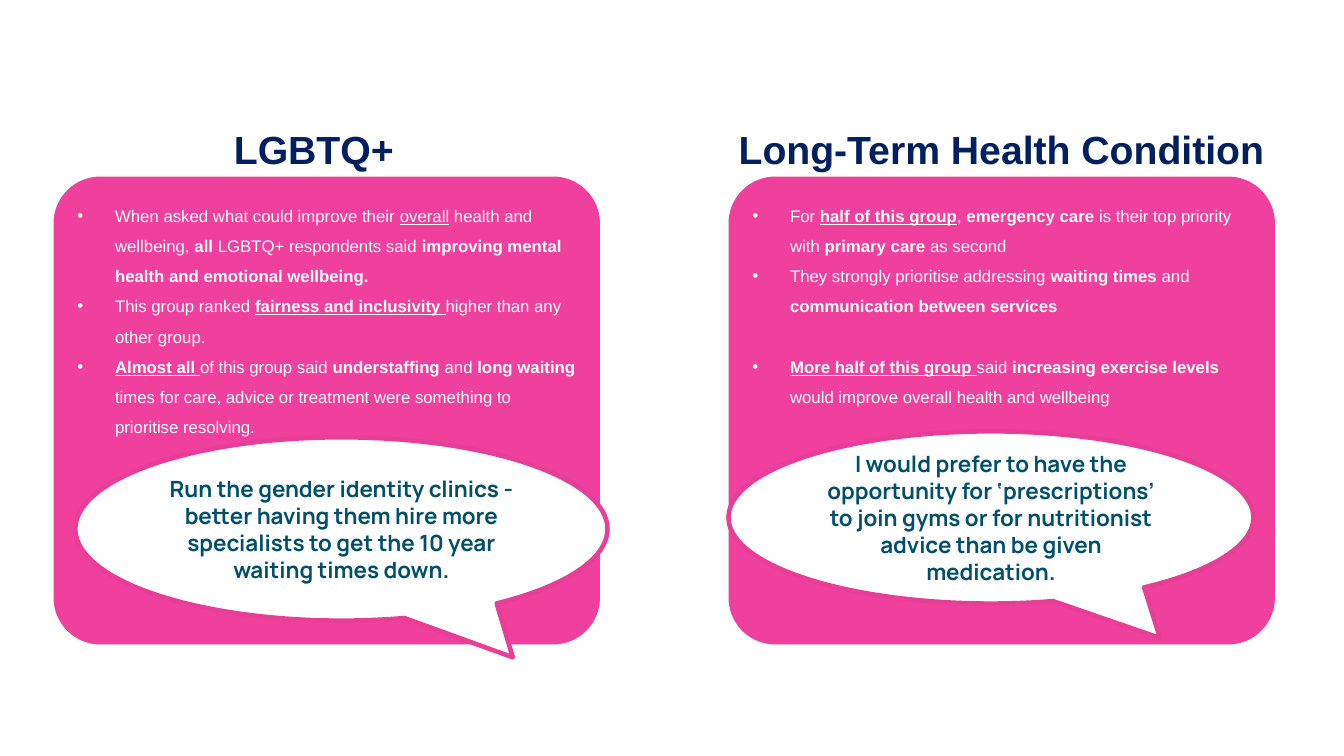
from lxml import etree
from pptx import Presentation
from pptx.dml.color import RGBColor
from pptx.enum.shapes import MSO_SHAPE
from pptx.enum.text import MSO_ANCHOR, MSO_AUTO_SIZE, PP_ALIGN
from pptx.oxml.ns import qn
from pptx.util import Cm, Pt

ROUND = MSO_SHAPE.ROUNDED_RECTANGLE
BUBBLE = MSO_SHAPE.OVAL_CALLOUT
TOP, MIDDLE = MSO_ANCHOR.TOP, MSO_ANCHOR.MIDDLE
LEFT, CENTER = PP_ALIGN.LEFT, PP_ALIGN.CENTER
FIXED = MSO_AUTO_SIZE.NONE

COLORS = {"pink": "F0409D", "edge": "E73E97", "navy": "002060",
          "teal": "004F6B", "white": "FFFFFF"}

GROUPS = [
    {"title": "LGBTQ+", "slots": (0, 2),
     "head": (5.64, 2.41, 8, 2.84), "left": 1.35,
     "quote": "Run the gender identity clinics - better having them hire more "
              "specialists to get the 10 year waiting times down.",
     "bubble": (1.9, 11.02, 13.41, 4.62),
     "points": [
         (0, [("When asked what could improve their ", ""), ("overall", "u"),
              (" health and wellbeing, ", ""), ("all ", "b"),
              ("LGBTQ+ respondents said ", ""),
              ("improving mental health and emotional wellbeing.", "b")]),
         (0, [("This group ranked ", ""), ("fairness and inclusivity ", "bu"),
              ("higher than any other group.", "")]),
         (0, [("Almost all ", "bu"), ("of this group said ", ""),
              ("understaffing", "b"), (" and ", ""), ("long waiting ", "b"),
              ("times for care, advice or treatment were something to "
               "prioritise resolving.", "")]),
     ]},
    {"title": "Long-Term Health Condition", "slots": (1, 4),
     "head": (18.36, 2.41, 15.5, 2.84), "left": 18.36,
     "quote": "I would prefer to have the opportunity for ‘prescriptions’ to join "
              "gyms or for nutritionist advice than be given medication.",
     "bubble": (18.36, 10.87, 13.23, 4.34),
     "points": [
         (0, [("For ", ""), ("half of this group", "bu"), (", ", ""),
              ("emergency care ", "b"), ("is their top priority with ", ""),
              ("primary care ", "b"), ("as second", "")]),
         (0, [("They strongly prioritise addressing ", ""), ("waiting times ", "b"),
              ("and ", ""), ("communication between services", "b")]),
         (21.6, [("More half of this group ", "bu"), ("said ", ""),
                 ("increasing exercise levels ", "b"),
                 ("would improve overall health and wellbeing", "")]),
     ]},
]
CARD = (4.45, 13.77, 11.79)


def color(name):
    return RGBColor.from_string(COLORS[name])


def style(font, face, size, name, bold):
    font.name, font.size, font.bold = face, Pt(size), bold
    font.color.rgb = color(name)


def place(shape, box):
    shape.left, shape.top, shape.width, shape.height = map(Cm, box)


def frame(shape, anchor):
    text = shape.text_frame
    text.word_wrap = True
    text.auto_size = FIXED
    text.vertical_anchor = anchor
    return text


def draw(kind, box, fill):
    shape = slide.shapes.add_shape(kind, *map(Cm, box))
    shape.shadow.inherit = False
    shape.fill.solid()
    shape.fill.fore_color.rgb = color(fill)
    return shape


def card(box):
    shape = draw(ROUND, box, "pink")
    shape.adjustments[0] = 0.1
    shape.line.fill.background()
    slide.shapes._spTree.insert(2, shape._element)


def head(shape, group):
    place(shape, group["head"])
    text = frame(shape, MIDDLE)
    text.text = group["title"]
    line = text.paragraphs[0]
    line.alignment = LEFT
    line.line_spacing = 0.9
    line.space_before = Pt(0)
    style(line.runs[0].font, "Arial", 28, "navy", True)


def points(shape, box, items):
    place(shape, box)
    text = frame(shape, TOP)
    text.margin_left = text.margin_right = Cm(0.6)
    text.margin_top = text.margin_bottom = Cm(0.47)
    for i, (gap, parts) in enumerate(items):
        line = text.add_paragraph() if i else text.paragraphs[0]
        line.line_spacing = 1.5
        line.space_before = Pt(gap)
        props = line._p.get_or_add_pPr()
        props.set("marL", str(Cm(0.95)))
        props.set("indent", str(-Cm(0.95)))
        etree.SubElement(props, qn("a:buFont")).set("typeface", "Arial")
        etree.SubElement(props, qn("a:buChar")).set("char", "•")
        for words, marks in parts:
            run = line.add_run()
            run.text = words
            style(run.font, "Arial", 12, "white", "b" in marks)
            run.font.underline = "u" in marks


def bubble(box, quote):
    shape = draw(BUBBLE, box, "white")
    shape.adjustments[0], shape.adjustments[1] = 0.322, 0.7
    shape.line.color.rgb = color("edge")
    shape.line.width = Pt(3.25)
    text = frame(shape, MIDDLE)
    text.text = quote
    line = text.paragraphs[0]
    line.alignment = CENTER
    style(line.runs[0].font, "Manrope", 16, "teal", True)


deck = Presentation()
deck.slide_width, deck.slide_height = Cm(33.87), Cm(19.05)
slide = deck.slides.add_slide(deck.slide_layouts[4])
slots = {s.placeholder_format.idx: s for s in slide.placeholders}

for group in GROUPS:
    title, body = group["slots"]
    top, width, height = CARD
    box = (group["left"], top, width, height)
    card(box)
    head(slots.pop(title), group)
    points(slots.pop(body), box, group["points"])
    bubble(group["bubble"], group["quote"])

for spare in slots.values():
    spare._element.getparent().remove(spare._element)

deck.save("out.pptx")
